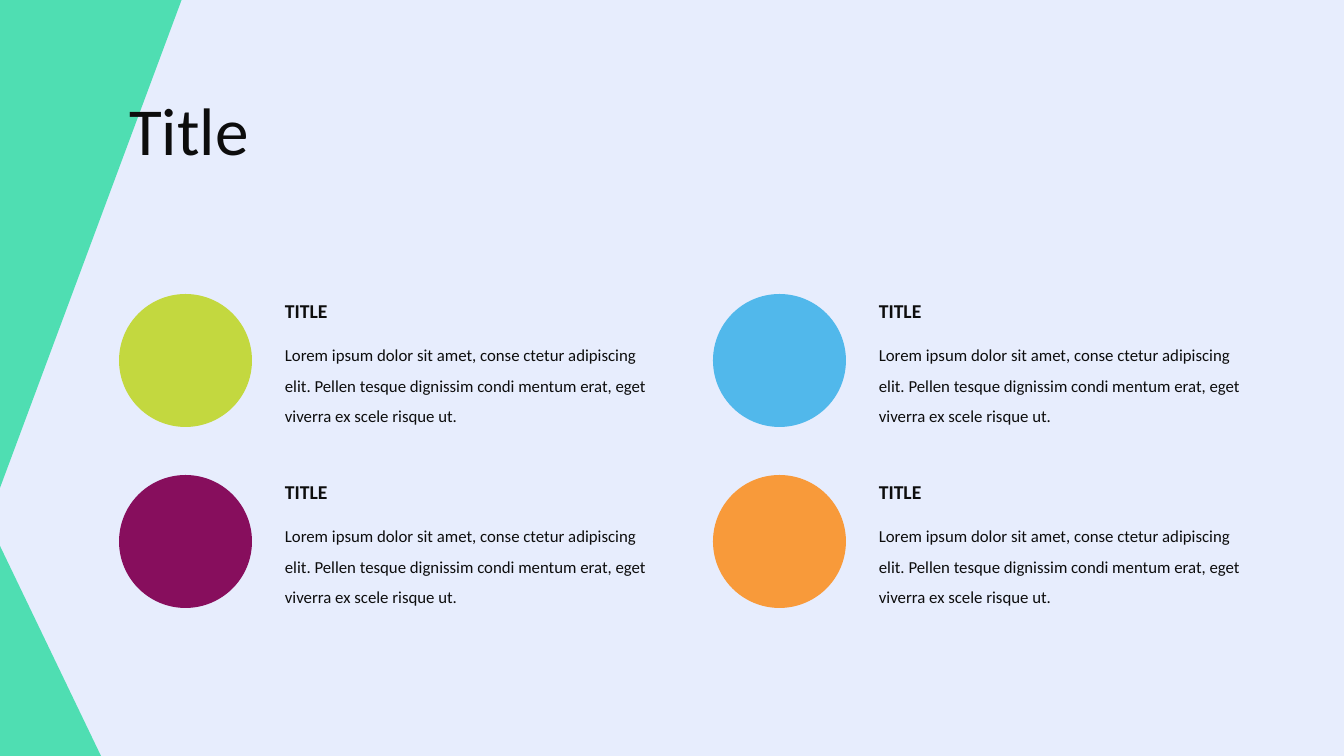
from pptx import Presentation
from pptx.dml.color import RGBColor
from pptx.enum.shapes import MSO_SHAPE
from pptx.enum.text import MSO_ANCHOR, MSO_AUTO_SIZE, PP_ALIGN
from pptx.util import Pt

OVAL, TRIANGLE = MSO_SHAPE.OVAL, MSO_SHAPE.RIGHT_TRIANGLE
TOP, LEFT = MSO_ANCHOR.TOP, PP_ALIGN.LEFT
NO_FIT = MSO_AUTO_SIZE.NONE
EMU_PER_PX = 914400 / 100.8
THEME = {
    "font": "Calibri", "ink": "0D0D0D", "background": "E7EDFD", "accent": "4FDEB2",
    "title": 48, "heading": 14, "body": 12,
}
LOREM = ("Lorem ipsum dolor sit amet, conse ctetur adipiscing elit. Pellen tesque "
         "dignissim condi mentum erat, eget viverra ex scele risque ut.")


def add_text(text, left, top, width, height, size, bold=False, spacing=1.0, box=None):
    """Write text in a new text box, or in the placeholder given as box."""
    area = [round(n * EMU_PER_PX) for n in (left, top, width, height)]
    box = box or page.shapes.add_textbox(*area)
    box.left, box.top, box.width, box.height = area
    frame = box.text_frame
    frame.word_wrap, frame.auto_size, frame.vertical_anchor = True, NO_FIT, TOP
    para = frame.paragraphs[0]
    para.alignment, para.line_spacing = LEFT, spacing
    span = para.add_run()
    span.text = text
    span.font.name, span.font.size, span.font.bold = THEME["font"], Pt(size), bold
    span.font.color.rgb = RGBColor.from_string(THEME["ink"])


def add_filled(kind, left, top, width, height, color):
    """Draw a plain filled shape without outline or shadow."""
    shape = page.shapes.add_shape(
        kind, *[round(n * EMU_PER_PX) for n in (left, top, width, height)])
    shape.shadow.inherit = False
    shape.fill.solid()
    shape.fill.fore_color.rgb = RGBColor.from_string(color)
    shape.line.fill.background()
    return shape


# Page and background
deck = Presentation()
deck.slide_width, deck.slide_height = round(1344 * EMU_PER_PX), round(756 * EMU_PER_PX)
page = deck.slides.add_slide(deck.slide_layouts[5])
page.background.fill.solid()
page.background.fill.fore_color.rgb = RGBColor.from_string(THEME["background"])

# Corner triangles on the left edge
add_filled(TRIANGLE, 0, 546, 101, 210, THEME["accent"])
upper_triangle = add_filled(TRIANGLE, 0, -1, 182, 489, THEME["accent"])
upper_triangle.element.spPr.xfrm.set("flipV", "1")

# Title, brought in front of the triangles
title = page.shapes.title
page.shapes.element.append(title.element)
add_text("Title", 119, 83, 332, 92, THEME["title"], box=title)

# Two by two grid: circle, heading and body text
columns = [(119, 120, ("C3D83F", "870E5D")), (713, 147, ("51B8EB", "F89A3A"))]
for left, heading_width, colors in columns:
    for row, color in enumerate(colors):
        top = 294 + 181 * row
        add_filled(OVAL, left, top, 133, 133, color)
        add_text("TITLE", left + 156, top, heading_width, 34, THEME["heading"], bold=True)
        add_text(LOREM, left + 156, top + 36, 397, 102, THEME["body"], spacing=1.5)

deck.save("out.pptx")
